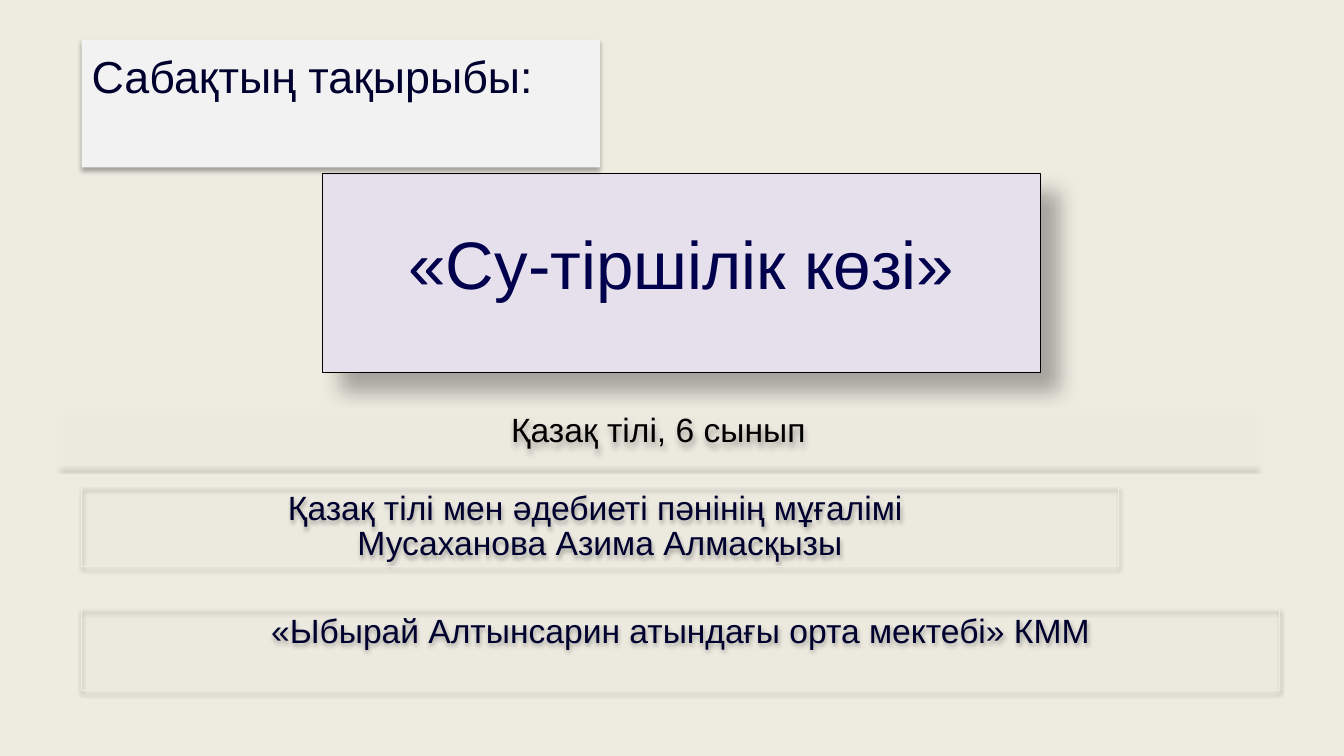
from lxml import etree
from pptx import Presentation, util as u
from pptx.dml.color import RGBColor
from pptx.enum import shapes, text
from pptx.oxml.ns import qn

SLIDE_W, SLIDE_H = u.Inches(13.33), u.Inches(7.5)
CREAM, NAVY, BLACK, PALE = "EEECE1", "00002E", "000000", "F2F2F2"
LEFT = 6.08
SOFT_SHADOW = (32, 3.5, 2.2, 90)
DEEP_SHADOW = (30, 15, 18, 45)


def color(hex_value):
    return RGBColor.from_string(hex_value)


def set_alpha(color_element, percent):
    etree.SubElement(color_element, qn("a:alpha"), val=str(percent * 1000))


def add_shadow(panel, opacity, blur, distance, angle):
    panel.shadow.inherit = False
    effects = panel._element.spPr.find(qn("a:effectLst"))
    outer = etree.SubElement(
        effects, qn("a:outerShdw"), blurRad=str(u.Pt(blur)),
        dist=str(u.Pt(distance)), dir=str(angle * 60000),
        algn="tl", rotWithShape="0")
    set_alpha(etree.SubElement(outer, qn("a:srgbClr"), val=BLACK), opacity)


def add_panel(slide, share, fill, line=None, opacity=100, shadow=SOFT_SHADOW):
    left, top, width, height = share
    panel = slide.shapes.add_shape(
        shapes.MSO_SHAPE.RECTANGLE,
        round(SLIDE_W * left / 100), round(SLIDE_H * top / 100),
        round(SLIDE_W * width / 100), round(SLIDE_H * height / 100))
    panel.fill.solid()
    panel.fill.fore_color.rgb = color(fill)
    if opacity < 100:
        fill_color = panel._element.spPr.find(qn("a:solidFill"))[0]
        set_alpha(fill_color, opacity)
    if line:
        panel.line.color.rgb = color(line)
        panel.line.width = u.Pt(0.75)
    else:
        panel.line.fill.background()
    add_shadow(panel, *shadow)
    return panel


def write(panel, lines, size, ink, align=text.PP_ALIGN.CENTER,
          anchor=text.MSO_ANCHOR.TOP, spacing=None):
    frame = panel.text_frame
    frame.word_wrap = True
    frame.vertical_anchor = anchor
    for index, line in enumerate(lines):
        paragraph = frame.add_paragraph() if index else frame.paragraphs[0]
        paragraph.alignment = align
        if spacing:
            paragraph.line_spacing = u.Pt(spacing)
        run = paragraph.add_run()
        run.text = line
        run.font.name = "Arial"
        run.font.size = u.Pt(size)
        run.font.color.rgb = color(ink)
    return frame


def add_caption(slide, share, lines, ink=NAVY):
    caption = add_panel(slide, share, PALE, CREAM, opacity=2)
    write(caption, lines, 24, ink, spacing=25)


def main():
    deck = Presentation()
    deck.slide_width, deck.slide_height = SLIDE_W, SLIDE_H
    slide = deck.slides.add_slide(deck.slide_layouts[6])
    slide.background.fill.solid()
    slide.background.fill.fore_color.rgb = color(CREAM)

    topic = add_panel(slide, (24.01, 22.93, 53.41, 26.4), "E6E0EC", BLACK,
                      shadow=DEEP_SHADOW)
    topic_frame = write(topic, ["«Су-тіршілік көзі»"], 48, "00004C",
                        anchor=text.MSO_ANCHOR.MIDDLE)
    topic_frame.margin_bottom = u.Inches(0.25)

    heading = add_panel(slide, (LEFT, 5.2, 38.56, 16.93), PALE)
    heading_frame = write(heading, ["Сабақтың тақырыбы:"], 32, NAVY,
                          align=text.PP_ALIGN.LEFT)
    heading_frame.margin_top = u.Inches(0.09)

    add_caption(slide, (LEFT, 64.4, 77.12, 10.53),
                ["Қазақ тілі мен әдебиеті пәнінің мұғалімі ",
                 "Мусаханова Азима Алмасқызы"])
    add_caption(slide, (4.43, 54.13, 89.12, 7.33),
                ["Қазақ тілі, 6 сынып"], BLACK)
    add_caption(slide, (LEFT, 80.67, 89.12, 10.67),
                ["«Ыбырай Алтынсарин атындағы орта мектебі» КММ"])

    deck.save("out.pptx")


if __name__ == "__main__":
    main()
